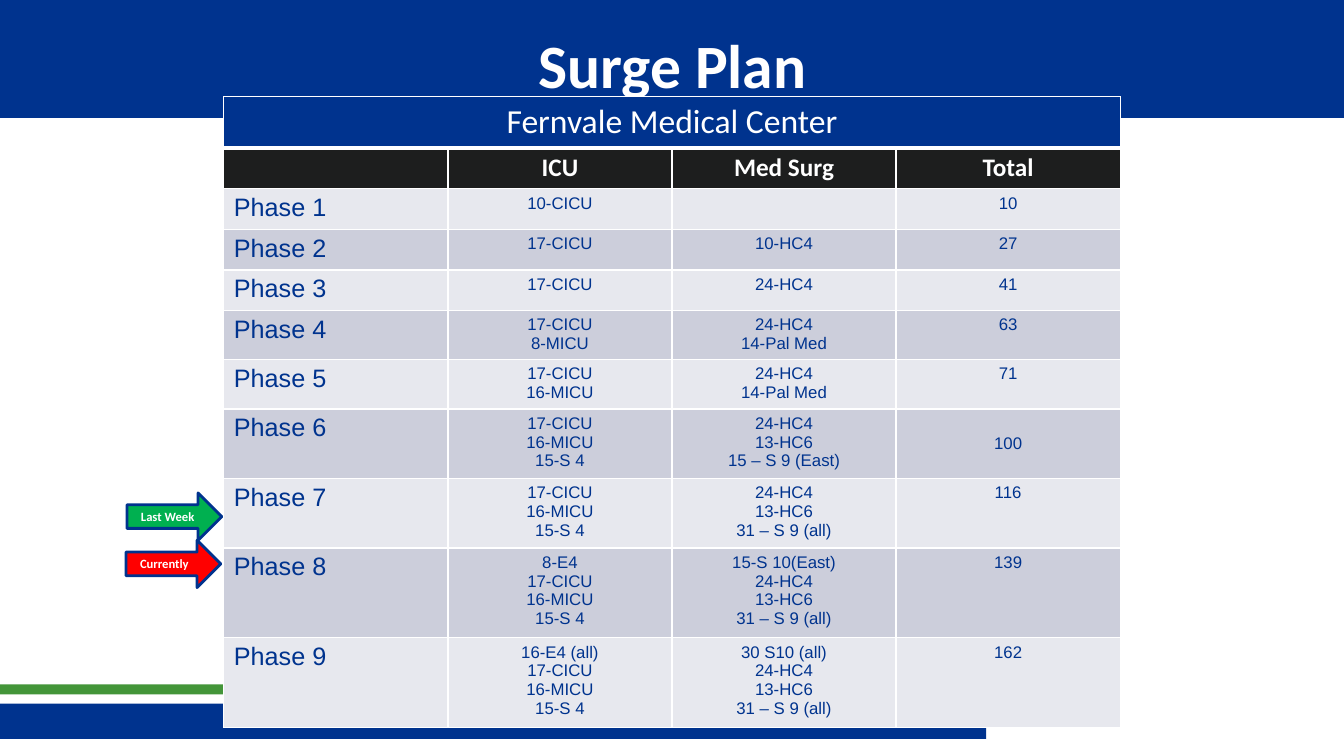
"""Build the surge plan slide with its phase table and week markers."""
from lxml import etree
from pptx import Presentation
from pptx import util as u
from pptx.dml.color import RGBColor
from pptx.enum import shapes, text
from pptx.oxml.ns import qn

HUES = {
    "blue": "00338E", "green": "439539", "white": "FFFFFF", "black": "1D1E1E",
    "pale": "E7E8EE", "grey": "CCCEDB", "red": "FF0000", "lime": "00B050",
}
HEADS = ["", "ICU", "Med Surg", "Total"]
PLAN = [
    (["10-CICU"], [], "10"),
    (["17-CICU"], ["10-HC4"], "27"),
    (["17-CICU"], ["24-HC4"], "41"),
    (["17-CICU", "8-MICU"], ["24-HC4", "14-Pal Med"], "63"),
    (["17-CICU", "16-MICU"], ["24-HC4", "14-Pal Med"], "71"),
    (["17-CICU", "16-MICU", "15-S 4"], ["24-HC4", "13-HC6", "15 – S 9 (East)"], "100"),
    (["17-CICU", "16-MICU", "15-S 4"], ["24-HC4", "13-HC6", "31 – S 9 (all)"], "116"),
    (["8-E4", "17-CICU", "16-MICU", "15-S 4"],
     ["15-S 10(East)", "24-HC4", "13-HC6", "31 – S 9 (all)"], "139"),
    (["16-E4 (all)", "17-CICU", "16-MICU", "15-S 4"],
     ["30 S10 (all)", "24-HC4", "13-HC6", "31 – S 9 (all)"], "162"),
]
HIGHS = {1: 0.4, 2: 0.49, 3: 0.69, 4: 0.89}
MID = text.PP_ALIGN.CENTER
LEFT = text.PP_ALIGN.LEFT


def tint(name):
    return RGBColor.from_string(HUES[name])


def box(*sides):
    return [u.Inches(side) for side in sides]


def write(frame, lines, size, font, hue, bold=False, align=MID):
    for i, line in enumerate(lines):
        para = frame.paragraphs[0] if i == 0 else frame.add_paragraph()
        para.alignment = align
        run = para.add_run()
        run.text = line
        run.font.size = u.Pt(size)
        run.font.name = font
        run.font.bold = bold
        run.font.color.rgb = tint(hue)


def add_form(parent, kind, place, hue, edge=None):
    form = parent.add_shape(kind, *box(*place))
    form.shadow.inherit = False
    form.fill.solid()
    form.fill.fore_color.rgb = tint(hue)
    if edge:
        form.line.color.rgb = tint(edge)
        form.line.width = u.Pt(2)
    else:
        form.line.fill.background()


def add_title(slide, words):
    title = slide.shapes.title
    title.left, title.top, title.width, title.height = box(0.67, 0.17, 12, 0.92)
    title.text_frame.vertical_anchor = text.MSO_ANCHOR.MIDDLE
    write(title.text_frame, [words], 44, "Calibri", "white", True)
    title.element.getparent().append(title.element)


def paint(cell, hue, base=1):
    props = cell._tc.get_or_add_tcPr()
    for side, width in (("L", 1), ("R", 1), ("T", 1), ("B", base)):
        line = etree.SubElement(props, qn("a:ln" + side), w=str(u.Pt(width)))
        fill = etree.SubElement(line, qn("a:solidFill"))
        etree.SubElement(fill, qn("a:srgbClr"), val=HUES["white"])
    cell.fill.solid()
    cell.fill.fore_color.rgb = tint(hue)


def add_plan(slide):
    highs = [0.49, 0.4] + [HIGHS[len(icu)] for icu, _, _ in PLAN]
    frame = slide.shapes.add_table(
        len(highs), len(HEADS), *box(2.22, 0.96, 8.89, sum(highs)))
    table = frame.table
    table.horz_banding = False
    table.first_row = False
    for row, high in zip(table.rows, highs):
        row.height = u.Inches(high)
    for cell in table.rows[0].cells:
        paint(cell, "blue", 3)
    top = table.cell(0, 0)
    top.merge(table.cell(0, len(HEADS) - 1))
    write(top.text_frame, ["Fernvale Medical Center"], 24, "Calibri", "white")
    for cell, head in zip(table.rows[1].cells, HEADS):
        paint(cell, "black")
        if head:
            write(cell.text_frame, [head], 18, "Calibri", "white", True)
    for i, (icu, med, total) in enumerate(PLAN, 1):
        cells = list(table.rows[i + 1].cells)
        for cell in cells:
            paint(cell, "pale" if i % 2 else "grey")
        write(cells[0].text_frame, [f"Phase {i}"], 18, "Arial", "blue", align=LEFT)
        for cell, lines in zip(cells[1:], (icu, med, [total])):
            write(cell.text_frame, lines, 12, "Arial", "blue")
    table.cell(7, 3).vertical_anchor = text.MSO_ANCHOR.MIDDLE


def add_mark(slide, words, left, top, wide, hue):
    group = slide.shapes.add_group_shape().shapes
    add_form(group, shapes.MSO_SHAPE.RIGHT_ARROW, (left, top, 0.94, 0.47), hue, "blue")
    label = group.add_textbox(*box(left + 0.04, top + 0.11, wide, 0.25))
    label.text_frame.word_wrap = False
    label.text_frame.auto_size = text.MSO_AUTO_SIZE.SHAPE_TO_FIT_TEXT
    write(label.text_frame, [words], 9, "Calibri", "white", True, LEFT)


def main():
    deck = Presentation()
    deck.slide_width, deck.slide_height = box(13.33, 7.5)
    slide = deck.slides.add_slide(deck.slide_layouts[5])
    for place, hue in (((-0.03, 6.98, 9.81, 0.35), "blue"),
                       ((-0.03, 6.79, 9.81, 0.1), "green"),
                       ((0, 0, 13.33, 1.17), "blue")):
        add_form(slide.shapes, shapes.MSO_SHAPE.RECTANGLE, place, hue)
    add_title(slide, "Surge Plan")
    add_plan(slide)
    add_mark(slide, "Currently", 1.25, 5.36, 0.69, "red")
    add_mark(slide, "Last Week", 1.26, 4.89, 0.74, "lime")
    deck.save("out.pptx")


if __name__ == "__main__":
    main()
